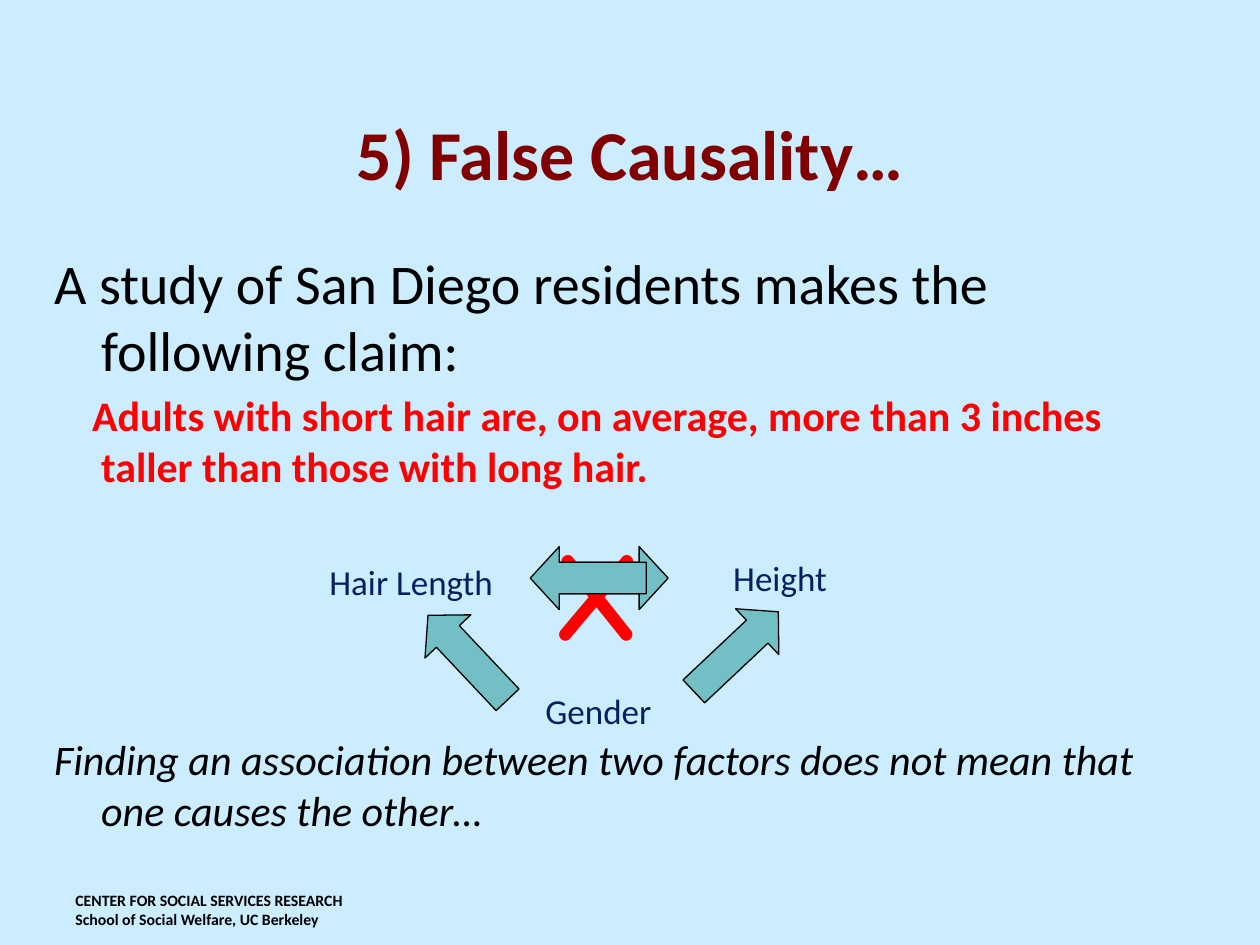
import pptx
import pptx.util
import pptx.dml.color
import pptx.enum.shapes
import pptx.enum.text

Cm, Pt = pptx.util.Cm, pptx.util.Pt
RGBColor = pptx.dml.color.RGBColor
MSO_SHAPE = pptx.enum.shapes.MSO_SHAPE
PP_ALIGN = pptx.enum.text.PP_ALIGN

SKY = RGBColor(0xCC, 0xEC, 0xFF)
MAROON = RGBColor(0x80, 0x00, 0x00)
BLACK = RGBColor(0x00, 0x00, 0x00)
RED = RGBColor(0xFF, 0x00, 0x00)
NAVY = RGBColor(0x00, 0x20, 0x60)
TEAL = RGBColor(0x72, 0xBF, 0xC5)

ARROW_W, ARROW_H = 2.34, 1.27


def format_text(p, size, color, bold=False, italic=False, font="Calibri"):
    for r in p.runs:
        r.font.name = font
        r.font.size = Pt(size)
        r.font.bold = bold
        r.font.italic = italic
        r.font.color.rgb = color


def add_text(slide, x, y, w, h, text, size, color, align=PP_ALIGN.LEFT, **style):
    tf = slide.shapes.add_textbox(Cm(x), Cm(y), Cm(w), Cm(h)).text_frame
    tf.word_wrap = True
    p = tf.paragraphs[0]
    p.text = text
    p.alignment = align
    format_text(p, size, color, **style)


def add_arrow(slide, kind, x, y, rotation=0):
    sp = slide.shapes.add_shape(kind, Cm(x), Cm(y), Cm(ARROW_W), Cm(ARROW_H))
    sp.adjustments[0] = 0.5
    sp.adjustments[1] = 0.46
    sp.rotation = rotation
    sp.shadow.inherit = False
    sp.fill.solid()
    sp.fill.fore_color.rgb = TEAL
    sp.line.color.rgb = BLACK
    sp.line.width = Pt(0.75)


def set_title(slide, text):
    sp = slide.shapes.title
    sp.left, sp.top, sp.width, sp.height = Cm(1.27), Cm(1.27), Cm(22.86), Cm(3.61)
    tf = sp.text_frame
    tf.text = text
    tf.vertical_anchor = pptx.enum.text.MSO_ANCHOR.MIDDLE
    p = tf.paragraphs[0]
    p.alignment = PP_ALIGN.CENTER
    format_text(p, 40, MAROON, bold=True)


def add_body(slide):
    # text, first-line indent in cm, space before, size, colour, style
    paragraphs = [
        ("A study of San Diego residents makes the following claim:",
         -0.95, 0, 32, BLACK, {}),
        ("Adults with short hair are, on average, more than 3 inches "
         "taller than those with long hair.",
         -0.18, 4, 24, RED, {"bold": True}),
        ("Finding an association between two factors does not mean that "
         "one causes the other…",
         -0.95, 139, 24, BLACK, {"italic": True}),
    ]
    tf = slide.shapes.add_textbox(Cm(0.84), Cm(4.88), Cm(23.29), Cm(13.34)).text_frame
    tf.word_wrap = True
    for i, (text, indent, before, size, color, style) in enumerate(paragraphs):
        p = tf.add_paragraph() if i else tf.paragraphs[0]
        p.text = text
        pPr = p._p.get_or_add_pPr()
        pPr.set("marL", str(Cm(0.95)))
        pPr.set("indent", str(Cm(indent)))
        p.space_before = Pt(before)
        format_text(p, size, color, **style)


def add_diagram(slide):
    # Factors
    add_text(slide, 5.33, 11.18, 5.92, 1.09, "Hair Length", 20, NAVY, PP_ALIGN.CENTER)
    add_text(slide, 13.54, 11.1, 3.38, 1.09, "Height", 20, NAVY, PP_ALIGN.RIGHT)
    add_text(slide, 8.79, 13.77, 6.55, 1.09, "Gender", 20, NAVY, PP_ALIGN.CENTER)
    # Arrows from gender to both factors
    add_arrow(slide, MSO_SHAPE.RIGHT_ARROW, 13.67, 12.5, 316.7)
    add_arrow(slide, MSO_SHAPE.RIGHT_ARROW, 8.26, 12.62, 226.7)
    # Crossed-out link between the factors
    add_arrow(slide, MSO_SHAPE.RIGHT_ARROW, 11.13, 11.02)
    add_text(slide, 10.9, 10.24, 2.11, 3.3, "X", 72, RED, bold=True, font="Comic Neue")
    add_arrow(slide, MSO_SHAPE.LEFT_ARROW, 10.69, 11.02)


def main():
    prs = pptx.Presentation()
    prs.slide_width, prs.slide_height = Cm(25.4), Cm(19.05)
    s = prs.slides.add_slide(prs.slide_layouts[5])
    s.background.fill.solid()
    s.background.fill.fore_color.rgb = SKY

    set_title(s, "5) False Causality…")
    add_body(s)
    add_diagram(s)
    # Footer
    add_text(s, 1.27, 17.83, 7.42, 1.02,
             "CENTER FOR SOCIAL SERVICES RESEARCH\vSchool of Social Welfare, UC Berkeley",
             9, BLACK, bold=True)
    prs.save("out.pptx")


if __name__ == "__main__":
    main()
